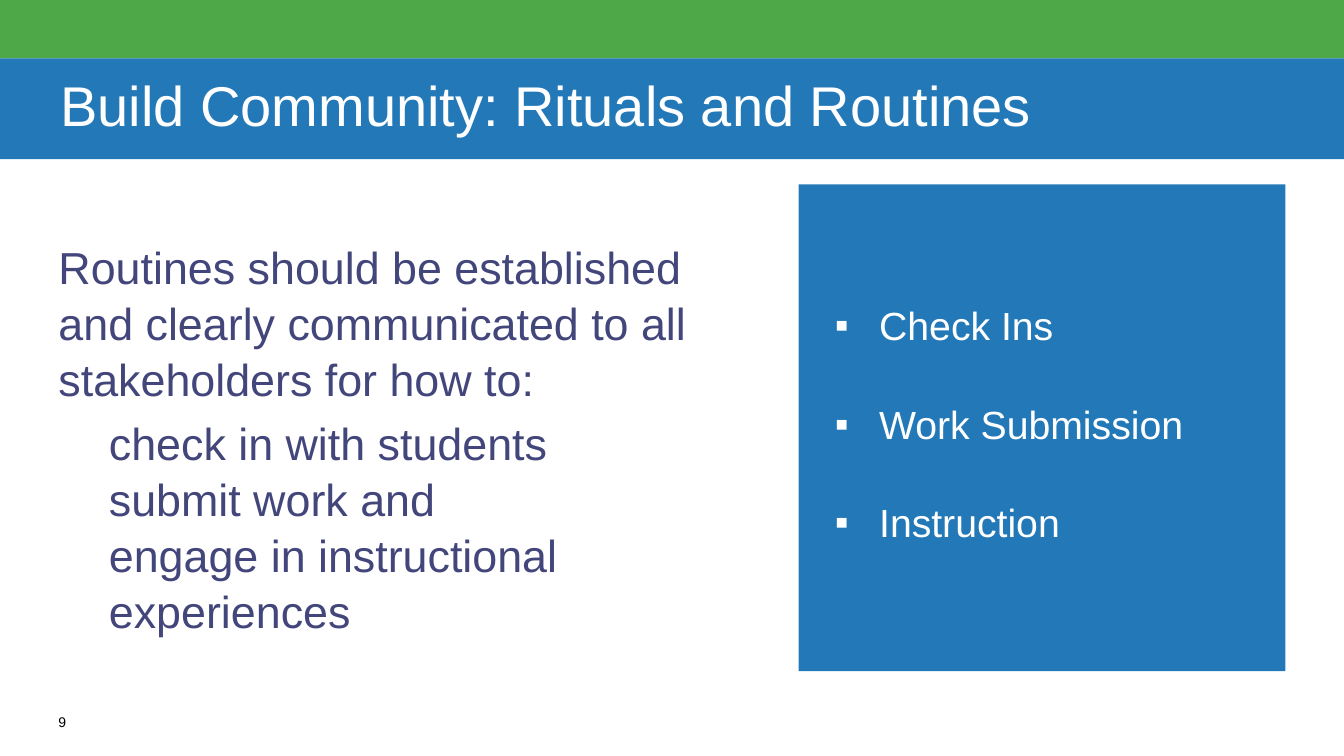
from dataclasses import dataclass

from lxml.etree import SubElement
from pptx import Presentation
from pptx.dml.color import RGBColor
from pptx.enum.shapes import MSO_SHAPE as Shape
from pptx.enum.text import MSO_ANCHOR as Anchor, PP_ALIGN as Align
from pptx.oxml.ns import qn
from pptx.util import Inches, Pt


@dataclass(frozen=True)
class Theme:
    font: str = "Arial"
    green: str = "4EA848"
    blue: str = "2379B8"
    indigo: str = "43467B"
    white: str = "FFFFFF"
    black: str = "000000"
    title_size: int = 40
    body_size: int = 32
    panel_size: int = 28
    number_size: int = 10


class SlideBuilder:
    def __init__(self, slide, theme):
        self.slide = slide
        self.theme = theme

    def block(self, left, top, width, height, color):
        box = self.slide.shapes.add_shape(
            Shape.RECTANGLE, Inches(left), Inches(top), Inches(width), Inches(height))
        box.shadow.inherit = False
        box.fill.solid()
        box.fill.fore_color.rgb = RGBColor.from_string(color)
        box.line.fill.background()
        return box

    def text_box(self, left, top, width, height):
        return self.slide.shapes.add_textbox(
            Inches(left), Inches(top), Inches(width), Inches(height))

    def add_text(self, box, lines, size, color, insets=(0, 0, 0, 0),
                 anchor=Anchor.TOP, spacing=None):
        """Fill the box with one paragraph per line; insets run left, top, right, bottom."""
        frame = box.text_frame
        frame.word_wrap = True
        frame.vertical_anchor = anchor
        (frame.margin_left, frame.margin_top,
         frame.margin_right, frame.margin_bottom) = map(Inches, insets)
        frame.text = "\n".join(lines)
        for para in frame.paragraphs:
            para.alignment = Align.LEFT
            if spacing:
                para.line_spacing = spacing
            for span in para.runs:
                span.font.name = self.theme.font
                span.font.size = Pt(size)
                span.font.color.rgb = RGBColor.from_string(color)
        return frame.paragraphs

    def indent(self, para, left, hanging=0, bullet=None):
        properties = para._p.get_or_add_pPr()
        properties.set("marL", str(Inches(left)))
        properties.set("indent", str(-Inches(hanging)))
        if bullet:
            SubElement(properties, qn("a:buFont")).set("typeface", self.theme.font)
            SubElement(properties, qn("a:buChar")).set("char", bullet)


def main():
    deck = Presentation()
    deck.slide_width, deck.slide_height = Inches(13.33), Inches(7.5)
    theme = Theme()
    page = SlideBuilder(deck.slides.add_slide(deck.slide_layouts[6]), theme)

    page.block(0, 0, 13.33, 0.58, theme.green)
    title = page.block(0, 0.58, 13.33, 1, theme.blue)
    page.add_text(title, ["Build Community: Rituals and Routines"], theme.title_size,
                  theme.white, (0.6, 0, 0.6, 0), Anchor.MIDDLE, 0.9)

    number = page.text_box(0.58, 7.08, 0.42, 0.25)
    page.add_text(number, ["9"], theme.number_size, theme.black)

    body = page.text_box(0.58, 2.36, 6.58, 4.48)
    intro, *steps = page.add_text(body, [
        "Routines should be established and clearly communicated to all "
        "stakeholders for how to:",
        "check in with students",
        "submit work and",
        "engage in instructional experiences",
    ], theme.body_size, theme.indigo, spacing=1.04)
    intro.space_before = steps[0].space_before = Pt(6)
    for step in steps:
        page.indent(step, 0.5)

    panel = page.block(7.92, 1.83, 4.83, 4.83, theme.blue)
    routines = page.add_text(panel, ["Check Ins", "Work Submission", "Instruction"],
                             theme.panel_size, theme.white, (0.3, 0.3, 0.3, 0.9),
                             Anchor.MIDDLE, 2.1)
    routines[0].space_before = Pt(6)
    for routine in routines:
        page.indent(routine, 0.5, 0.44, "▪")

    deck.save("out.pptx")


if __name__ == "__main__":
    main()
